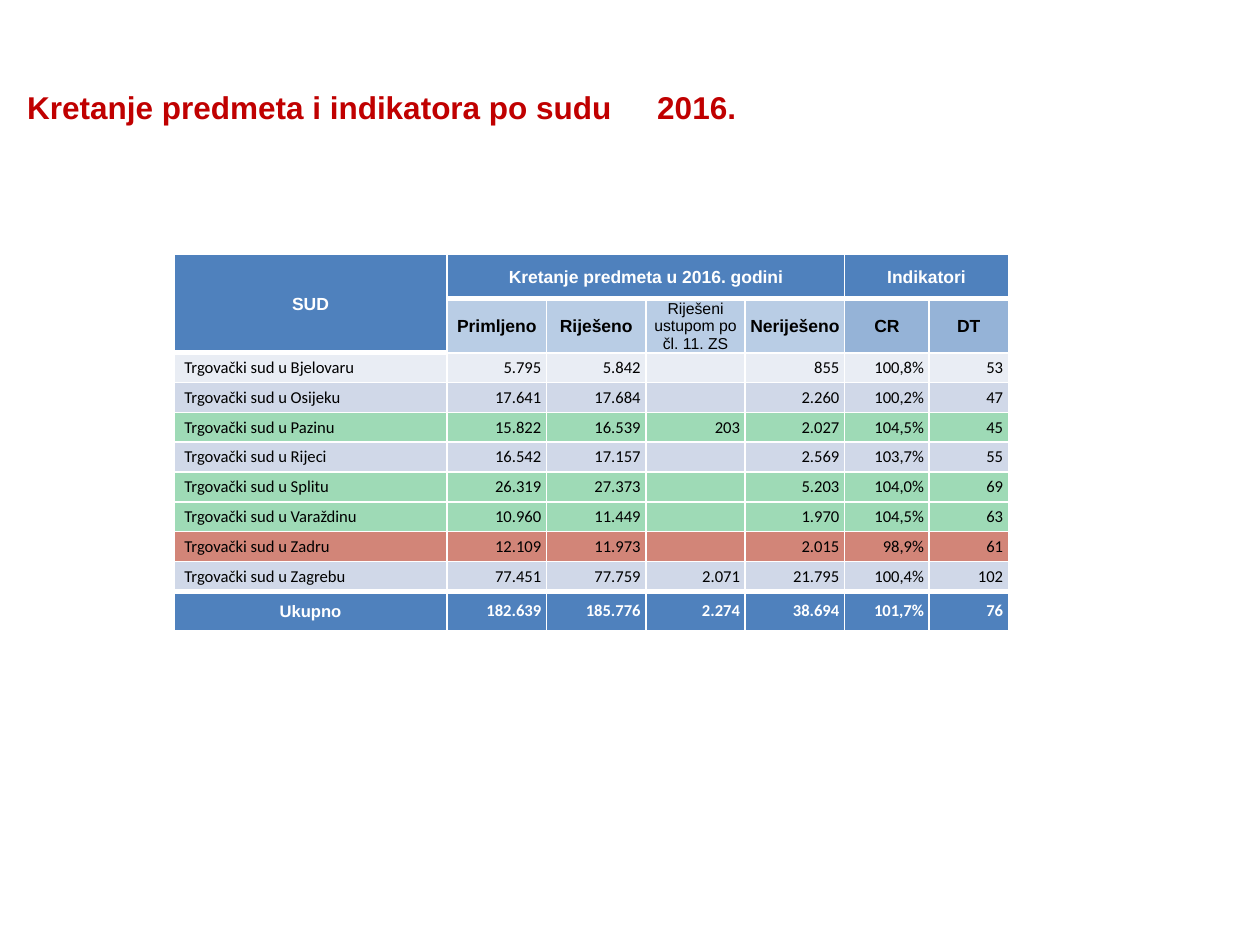
from dataclasses import dataclass
from typing import Optional

from lxml.etree import SubElement
from pptx import Presentation
from pptx.dml.color import RGBColor
from pptx.enum.text import MSO_ANCHOR as Anchor, PP_ALIGN as Align
from pptx.oxml.ns import qn
from pptx.util import Pt


@dataclass(frozen=True)
class Theme:
    title: str = "C00000"
    white: str = "FFFFFF"
    black: str = "000000"
    header: str = "4F81BD"
    cases: str = "B9CDE5"
    indicators: str = "95B3D7"
    light: str = "E9EDF4"
    plain: str = "D0D8E8"
    good: str = "9EDAB6"
    bad: str = "D28578"
    heading_font: str = "Arial"
    body_font: str = "Calibri"
    title_size: float = 18
    header_size: float = 10
    small_size: float = 9
    body_size: float = 9.5
    thin: float = 1
    thick: float = 3


THEME = Theme()


@dataclass(frozen=True)
class Style:
    fill: Optional[str]
    font: str
    size: float
    color: str
    bold: bool
    align: Align
    insets: tuple[float, float, float, float]


@dataclass(frozen=True)
class Court:
    city: str
    values: tuple[str, ...]
    fill: str


HEADER_INSETS = (0.72, 0.72, 0.72, 0)
NAME_INSETS = (6, 0, 0, 0)
VALUE_INSETS = (0, 0, 3, 0)
COLUMN_WIDTHS = (156.1, 56.8, 56.8, 56.8, 56.8, 48.4, 45.2)
ROW_HEIGHTS = (25.2, 29.5, *[17.04] * 8, 22.4)
LAST_ROW = len(ROW_HEIGHTS) - 1

SUBHEADERS = ("Primljeno", "Riješeno", "Riješeni ustupom po čl. 11. ZS",
              "Neriješeno", "CR", "DT")
COURTS = (
    Court("Bjelovaru", ("5.795", "5.842", "", "855", "100,8%", "53"), THEME.light),
    Court("Osijeku", ("17.641", "17.684", "", "2.260", "100,2%", "47"), THEME.plain),
    Court("Pazinu", ("15.822", "16.539", "203", "2.027", "104,5%", "45"), THEME.good),
    Court("Rijeci", ("16.542", "17.157", "", "2.569", "103,7%", "55"), THEME.plain),
    Court("Splitu", ("26.319", "27.373", "", "5.203", "104,0%", "69"), THEME.good),
    Court("Varaždinu", ("10.960", "11.449", "", "1.970", "104,5%", "63"), THEME.good),
    Court("Zadru", ("12.109", "11.973", "", "2.015", "98,9%", "61"), THEME.bad),
    Court("Zagrebu", ("77.451", "77.759", "2.071", "21.795", "100,4%", "102"), THEME.plain),
)
TOTALS = ("182.639", "185.776", "2.274", "38.694", "101,7%", "76")


def header_style(fill: str, color: str, small: bool = False) -> Style:
    size = THEME.small_size if small else THEME.header_size
    return Style(fill, THEME.heading_font, size, color, not small, Align.CENTER, HEADER_INSETS)


def body_style(fill: str, align: Align, insets: tuple, total: bool = False) -> Style:
    color = THEME.white if total else THEME.black
    font = THEME.heading_font if align == Align.CENTER else THEME.body_font
    return Style(fill, font, THEME.body_size, color, total, align, insets)


def write_text(para, text: str, style: Style) -> None:
    para.alignment = style.align
    if not text:
        SubElement(para._p, qn("a:endParaRPr"), sz=str(int(style.size * 100)))
        return
    span = para.add_run()
    span.text = text
    formats = {"name": style.font, "size": Pt(style.size), "bold": style.bold}
    for name, value in formats.items():
        setattr(span.font, name, value)
    span.font.color.rgb = RGBColor.from_string(style.color)


def set_insets(target, insets: tuple[float, float, float, float]) -> None:
    for side, value in zip(("left", "top", "right", "bottom"), insets):
        setattr(target, f"margin_{side}", Pt(value))


def fill_cell(cell, text: str, style: Style) -> None:
    set_insets(cell, style.insets)
    cell.vertical_anchor = Anchor.MIDDLE
    cell.fill.solid()
    cell.fill.fore_color.rgb = RGBColor.from_string(style.fill)
    write_text(cell.text_frame.paragraphs[0], text, style)


def width_below(row: int, column: int) -> float:
    heavy = row in (0, LAST_ROW - 1) or (row, column) == (1, 0)
    return THEME.thick if heavy else THEME.thin


def set_borders(cell, row: int, column: int) -> None:
    widths = {"L": THEME.thin, "R": THEME.thin,
              "T": width_below(row - 1, column), "B": width_below(row, column)}
    properties = cell._tc.get_or_add_tcPr()
    for index, (side, width) in enumerate(widths.items()):
        line = SubElement(properties, qn(f"a:ln{side}"), w=str(Pt(width)))
        fill = SubElement(line, qn("a:solidFill"))
        SubElement(fill, qn("a:srgbClr"), val=THEME.white)
        properties.insert(index, line)


def add_title(slide) -> None:
    box = slide.shapes.add_textbox(Pt(0), Pt(43.2), Pt(720), Pt(36))
    frame = box.text_frame
    frame.word_wrap = True
    frame.vertical_anchor = Anchor.MIDDLE
    set_insets(frame, (15.6, 3.6, 7.2, 3.6))
    style = Style(None, THEME.heading_font, THEME.title_size, THEME.title, True,
                  Align.LEFT, HEADER_INSETS)
    write_text(frame.paragraphs[0], "Kretanje predmeta i indikatora po sudu\t2016.", style)


def fill_row(table, row: int, name: str, name_style: Style,
             values: tuple[str, ...], value_style: Style) -> None:
    fill_cell(table.cell(row, 0), name, name_style)
    for column, value in enumerate(values, 1):
        fill_cell(table.cell(row, column), value, value_style)


def add_court_table(slide) -> None:
    table = slide.shapes.add_table(
        len(ROW_HEIGHTS), len(COLUMN_WIDTHS), Pt(99.4), Pt(145.4),
        Pt(sum(COLUMN_WIDTHS)), Pt(sum(ROW_HEIGHTS))).table
    table.first_row = table.horz_banding = False
    for column, width in zip(table.columns, COLUMN_WIDTHS):
        column.width = Pt(width)
    for row, height in zip(table.rows, ROW_HEIGHTS):
        row.height = Pt(height)

    headings = (("SUD", 0, 1, 0), ("Kretanje predmeta u 2016. godini", 1, 0, 4),
                ("Indikatori", 5, 0, 6))
    for text, column, last_row, last_column in headings:
        cell = table.cell(0, column)
        cell.merge(table.cell(last_row, last_column))
        fill_cell(cell, text, header_style(THEME.header, THEME.white))
    for column, text in enumerate(SUBHEADERS, 1):
        fill = THEME.cases if column < 5 else THEME.indicators
        fill_cell(table.cell(1, column), text, header_style(fill, THEME.black, column == 3))

    for row, court in enumerate(COURTS, 2):
        fill_row(table, row, f"Trgovački sud u {court.city}",
                 body_style(court.fill, Align.LEFT, NAME_INSETS),
                 court.values, body_style(court.fill, Align.RIGHT, VALUE_INSETS))
    fill_row(table, LAST_ROW, "Ukupno",
             body_style(THEME.header, Align.CENTER, HEADER_INSETS, True),
             TOTALS, body_style(THEME.header, Align.RIGHT, VALUE_INSETS, True))

    for row in range(len(ROW_HEIGHTS)):
        for column in range(len(COLUMN_WIDTHS)):
            set_borders(table.cell(row, column), row, column)


def main() -> None:
    deck = Presentation()
    deck.slide_width, deck.slide_height = Pt(720), Pt(540)
    slide = deck.slides.add_slide(deck.slide_layouts[6])
    add_court_table(slide)
    add_title(slide)
    deck.save("out.pptx")


if __name__ == "__main__":
    main()
